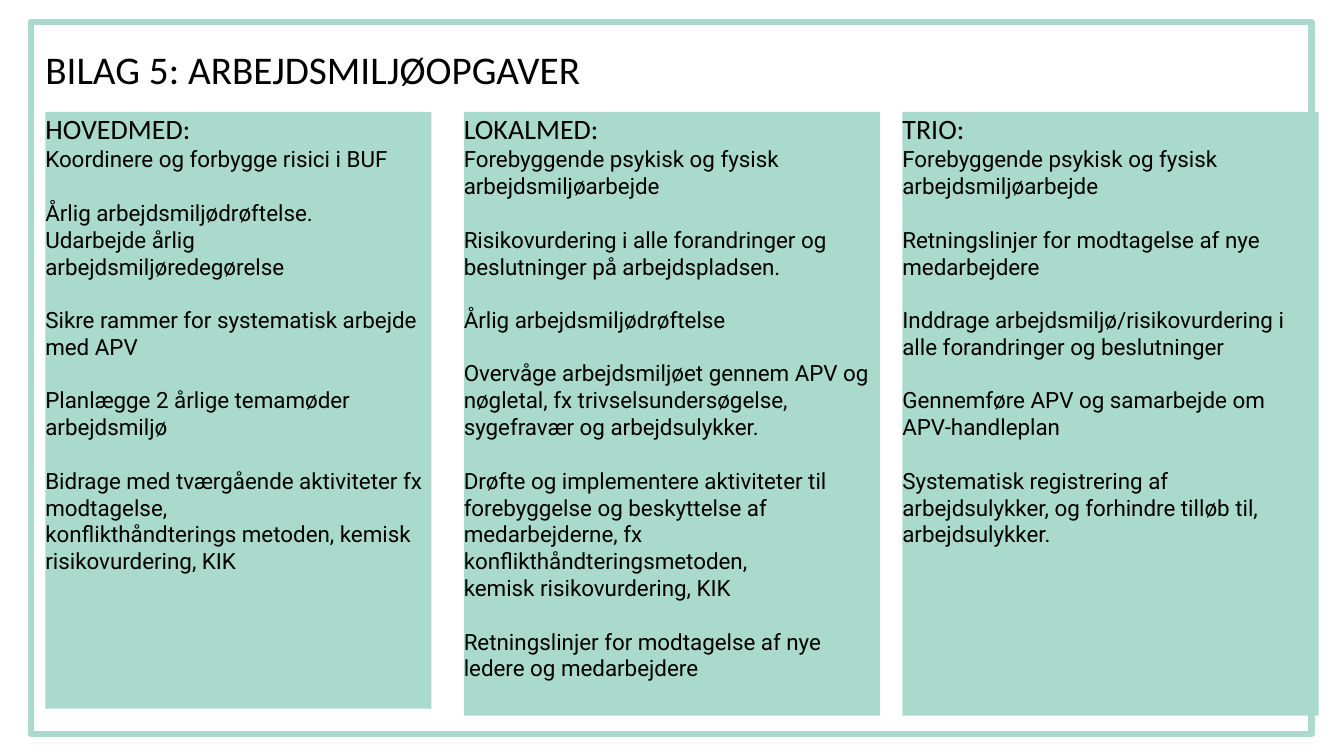
from pptx import Presentation
from pptx.dml.color import RGBColor
from pptx.enum.shapes import MSO_SHAPE
from pptx.enum.text import MSO_ANCHOR, MSO_AUTO_SIZE, PP_ALIGN
from pptx.util import Pt

RECTANGLE = MSO_SHAPE.RECTANGLE
TOP = MSO_ANCHOR.TOP
NO_AUTOFIT = MSO_AUTO_SIZE.NONE
LEFT = PP_ALIGN.LEFT

MINT = RGBColor(0xA9, 0xDA, 0xCB)
BLACK = RGBColor(0x00, 0x00, 0x00)
HEADING_FONT = "Calibri"
BODY_FONT = "Roboto"
BLOCK_GAP = 19  # points, one line of body text

PX = 9144  # EMU per px, 100 px to the inch
TITLE_LAYOUT = 5

TITLE = "BILAG 5: ARBEJDSMILJØOPGAVER"
COLUMN_TOP = 111

# Each column: left, width, height, heading, blocks of lines
COLUMNS = [
    (45, 383, 592, "HOVEDMED:", [
        ["Koordinere og forbygge risici i BUF"],
        ["Årlig arbejdsmiljødrøftelse.",
         "Udarbejde årlig arbejdsmiljøredegørelse"],
        ["Sikre rammer for systematisk arbejde med APV"],
        ["Planlægge 2 årlige temamøder arbejdsmiljø"],
        ["Bidrage med tværgående aktiviteter fx modtagelse,",
         "konflikthåndterings metoden, kemisk risikovurdering, KIK"],
    ]),
    (460, 413, 599, "LOKALMED:", [
        ["Forebyggende psykisk og fysisk arbejdsmiljøarbejde"],
        ["Risikovurdering i alle forandringer og",
         "beslutninger på arbejdspladsen."],
        ["Årlig arbejdsmiljødrøftelse"],
        ["Overvåge arbejdsmiljøet gennem APV og nøgletal, "
         "fx trivselsundersøgelse, sygefravær og arbejdsulykker."],
        ["Drøfte og implementere aktiviteter til forebyggelse og beskyttelse "
         "af medarbejderne, fx konflikthåndteringsmetoden,",
         "kemisk risikovurdering, KIK"],
        ["Retningslinjer for modtagelse af nye ledere og medarbejdere"],
    ]),
    (895, 413, 599, "TRIO:", [
        ["Forebyggende psykisk og fysisk arbejdsmiljøarbejde"],
        ["Retningslinjer for modtagelse af nye medarbejdere"],
        ["Inddrage arbejdsmiljø/risikovurdering i alle forandringer "
         "og beslutninger"],
        ["Gennemføre APV og samarbejde om APV-handleplan"],
        ["Systematisk registrering af arbejdsulykker, og forhindre tilløb "
         "til, arbejdsulykker."],
    ]),
]


def write(para, text, *, font, size, before=0):
    para.alignment = LEFT
    para.space_before = Pt(before)
    span = para.add_run()
    span.text = text
    span.font.name = font
    span.font.size = Pt(size)
    span.font.color.rgb = BLACK


def prepare_frame(shape):
    frame = shape.text_frame
    frame.margin_left = frame.margin_right = 0
    frame.margin_top = frame.margin_bottom = 0
    frame.word_wrap = True
    frame.auto_size = NO_AUTOFIT
    frame.vertical_anchor = TOP
    return frame


def add_rectangle(page, box):
    shape = page.shapes.add_shape(RECTANGLE, *(length * PX for length in box))
    shape.shadow.inherit = False
    return shape


def add_border(page, box):
    border = add_rectangle(page, box)
    border.fill.background()
    border.line.color.rgb = MINT
    border.line.width = Pt(4.5)


def add_title(page, box):
    title = page.shapes.title
    title.left, title.top, title.width, title.height = (
        length * PX for length in box)
    frame = prepare_frame(title)
    write(frame.paragraphs[0], TITLE, font=HEADING_FONT, size=28)


def add_column(page, box, heading, blocks):
    panel = add_rectangle(page, box)
    panel.fill.solid()
    panel.fill.fore_color.rgb = MINT
    panel.line.fill.background()
    frame = prepare_frame(panel)
    write(frame.paragraphs[0], heading, font=HEADING_FONT, size=20)
    for block_number, lines in enumerate(blocks):
        for line_number, line in enumerate(lines):
            starts_block = block_number > 0 and line_number == 0
            write(frame.add_paragraph(), line, font=BODY_FONT, size=16,
                  before=BLOCK_GAP if starts_block else 0)


def main():
    deck = Presentation()
    deck.slide_width, deck.slide_height = 1333 * PX, 750 * PX
    page = deck.slides.add_slide(deck.slide_layouts[TITLE_LAYOUT])

    # Border and title
    add_border(page, (31, 22, 1270, 706))
    add_title(page, (45, 45, 922, 47))

    # Three task columns
    for left, width, height, heading, blocks in COLUMNS:
        add_column(page, (left, COLUMN_TOP, width, height), heading, blocks)

    deck.save("out.pptx")


if __name__ == "__main__":
    main()
